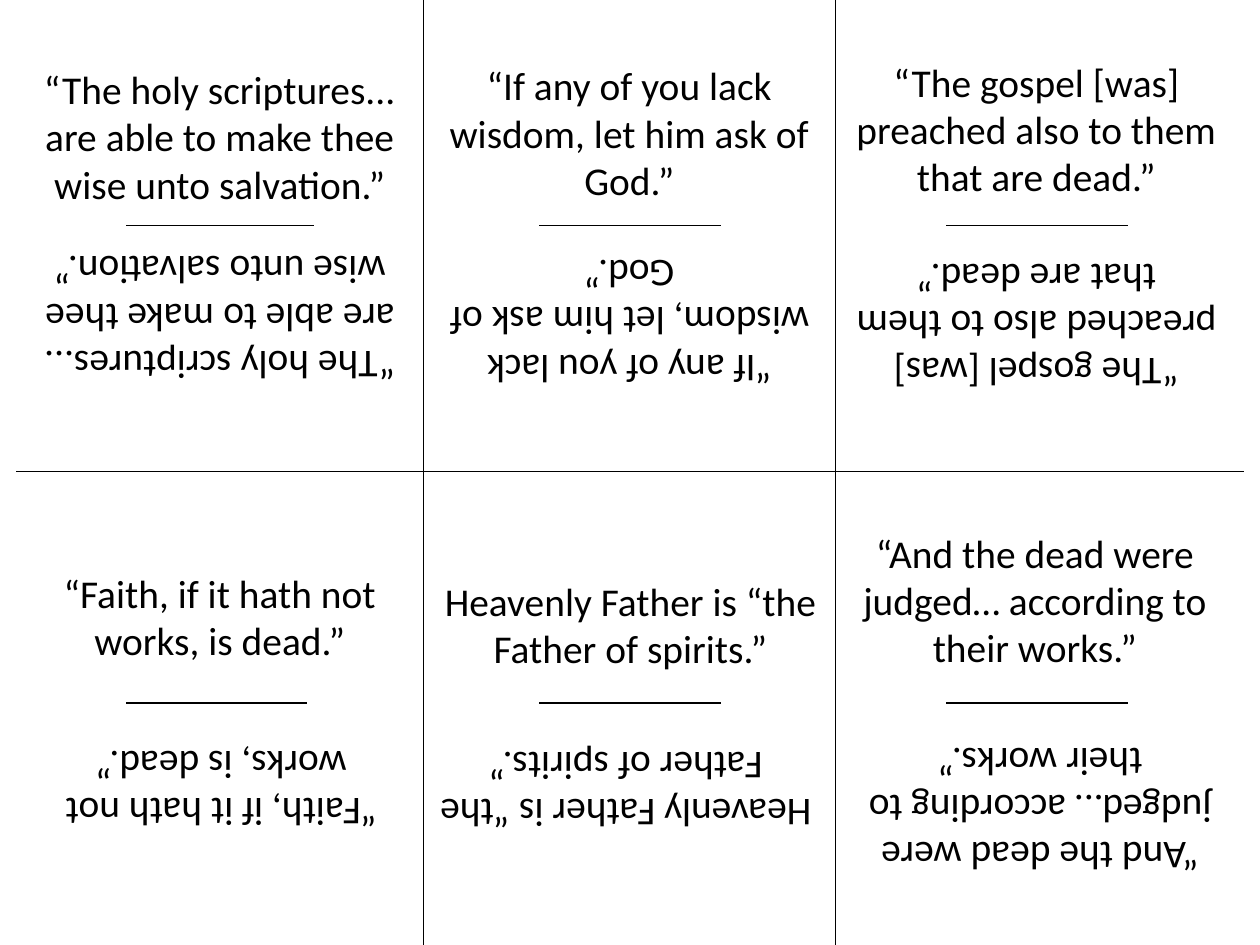
from lxml import etree
from pptx import Presentation
from pptx.dml.color import RGBColor
from pptx.enum import shapes, text
from pptx.oxml.ns import qn
from pptx.util import Pt

INK = RGBColor(0, 0, 0)
PAPER = RGBColor(255, 255, 255)
PAGE_WIDTH, PAGE_HEIGHT = 720, 540
QUOTE_WIDTH = 229.7
HEIGHT_BY_LINES = {2: 61.9, 3: 89.3}
FOLD_WIDTH = 103.7
FOLD_LEFTS = (72, 308.2, 540.7)
FOLD_TOPS = (128.9, 401.8)

CARDS = (
    ("“The holy scriptures... are able to make thee wise unto salvation.”",
     3, (10.8, 33.8), (10.8, 137.5)),
    ("“If any of you lack wisdom, let him ask of God.”",
     3, (244.8, 31.7), (244.8, 139.7)),
    ("“The gospel [was] preached also to them that are dead.”",
     3, (477.4, 29.5), (477.4, 141.8)),
    ("“Faith, if it hath not works, is dead.”",
     2, (10.8, 321.8), (11.5, 420.5)),
    ("Heavenly Father is “the Father of spirits.”",
     2, (245.5, 326.2), (242.6, 421.2)),
    ("“And the dead were judged… according to their works.”",
     3, (476.6, 298.8), (479.5, 418.3)),
)


def add_rule(slide, x1, y1, x2, y2):
    rule = slide.shapes.add_connector(
        shapes.MSO_CONNECTOR.STRAIGHT, Pt(x1), Pt(y1), Pt(x2), Pt(y2))
    rule.line.color.rgb = INK
    rule.line.width = Pt(0.75)
    etree.SubElement(rule._element.spPr, qn("a:effectLst"))


def add_quote(slide, words, lines, corner, rotation):
    left, top = corner
    quote = slide.shapes.add_textbox(
        Pt(left), Pt(top), Pt(QUOTE_WIDTH), Pt(HEIGHT_BY_LINES[lines]))
    quote.rotation = rotation
    frame = quote.text_frame
    frame.word_wrap = True
    frame.auto_size = text.MSO_AUTO_SIZE.SHAPE_TO_FIT_TEXT
    paragraph = frame.paragraphs[0]
    paragraph.alignment = text.PP_ALIGN.CENTER
    run = paragraph.add_run()
    run.text = words
    run.font.name = "Calibri"
    run.font.size = Pt(22.5)
    run.font.color.rgb = INK


def add_cut_lines(slide):
    add_rule(slide, 9.4, 269.3, PAGE_WIDTH - 9.4, 269.3)
    for x in (241.9, 477.4):
        add_rule(slide, x, 0, x, PAGE_HEIGHT)


def add_fold_lines(slide):
    add_rule(slide, 75.6, FOLD_TOPS[0], 75.6 + FOLD_WIDTH, FOLD_TOPS[0])
    for y in FOLD_TOPS:
        for x in FOLD_LEFTS:
            add_rule(slide, x, y, x + FOLD_WIDTH, y)


def main():
    deck = Presentation()
    deck.slide_width, deck.slide_height = Pt(PAGE_WIDTH), Pt(PAGE_HEIGHT)
    slide = deck.slides.add_slide(deck.slide_layouts[6])
    slide.background.fill.solid()
    slide.background.fill.fore_color.rgb = PAPER
    add_cut_lines(slide)
    add_fold_lines(slide)
    for words, lines, upright, inverted in CARDS:
        add_quote(slide, words, lines, upright, 0)
        add_quote(slide, words, lines, inverted, 180)
    deck.save("out.pptx")


if __name__ == "__main__":
    main()
